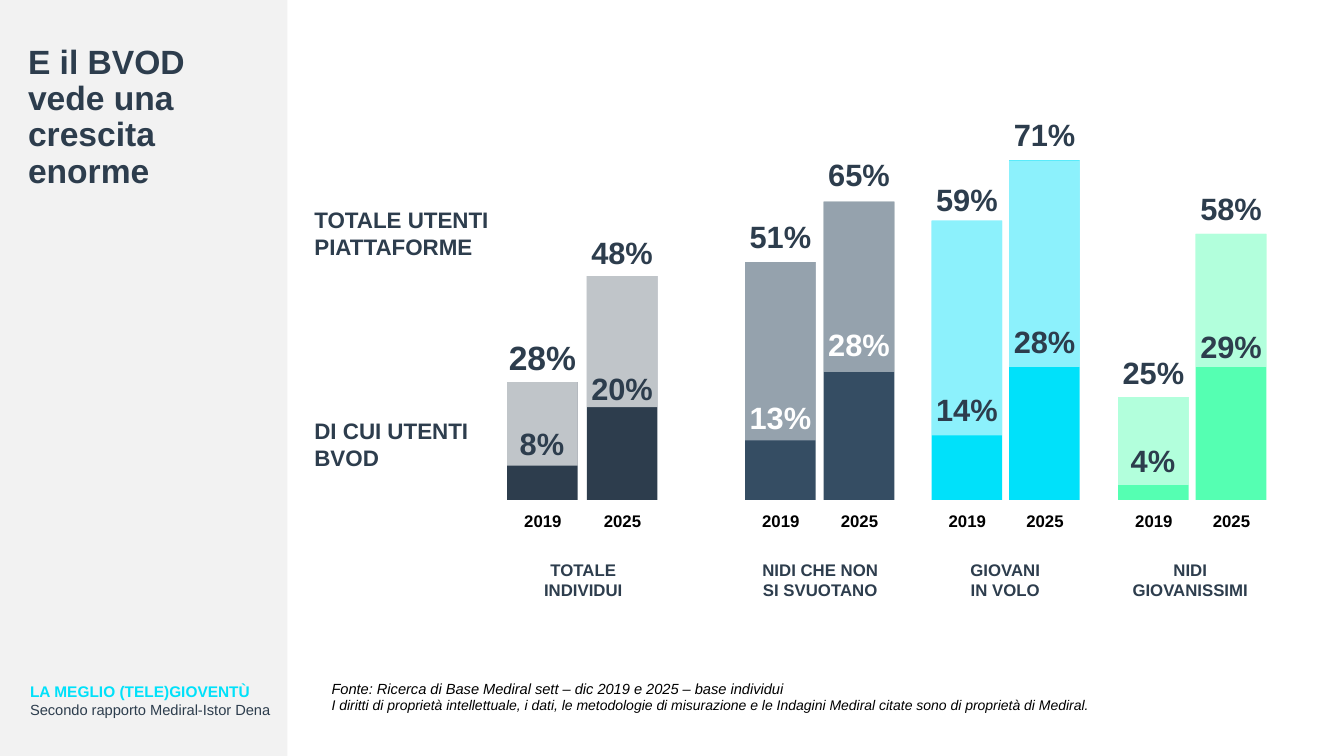
from pptx import Presentation
from pptx.dml.color import RGBColor
from pptx.enum.shapes import MSO_SHAPE
from pptx.enum.text import MSO_AUTO_SIZE, PP_ALIGN
from pptx.oxml.ns import qn
from pptx.util import Emu, Pt
from lxml.etree import SubElement

SCALE = 9144
INK = RGBColor(0x2D, 0x3D, 0x4D)
NAVY = RGBColor(0x35, 0x4D, 0x63)
CYAN = RGBColor(0x00, 0xE1, 0xFA)
MINT = RGBColor(0x55, 0xFF, 0xB2)
PALE = RGBColor(0xF2, 0xF2, 0xF2)
WHITE = RGBColor(0xFF, 0xFF, 0xFF)
BLACK = RGBColor(0x00, 0x00, 0x00)

BASE = 496
WIDE = 70


def px(*nums):
    return [Emu(num * SCALE) for num in nums]


def write(frame, text, size=12, color=INK, bold=True, italic=False,
          align=PP_ALIGN.LEFT, space=None, first=True):
    para = frame.paragraphs[0] if first else frame.add_paragraph()
    para.alignment = align
    para.line_spacing = space
    run = para.add_run()
    run.text = text
    font = run.font
    font.name = "Arial"
    font.size = Pt(size)
    font.bold = bold
    font.italic = italic
    font.color.rgb = color


class Board:
    def __init__(self, deck):
        self.slide = deck.slides.add_slide(deck.slide_layouts[6])

    def rect(self, box, color, alpha=None):
        shape = self.slide.shapes.add_shape(MSO_SHAPE.RECTANGLE, *px(*box))
        shape.shadow.inherit = False
        shape.fill.solid()
        shape.fill.fore_color.rgb = color
        shape.line.fill.background()
        if alpha:
            tone = shape.fill._xPr.find(qn("a:solidFill"))[0]
            SubElement(tone, qn("a:alpha")).set("val", str(alpha * 1000))

    def text(self, box, *lines, tight=False, **style):
        frame = self.slide.shapes.add_textbox(*px(*box)).text_frame
        frame.word_wrap = not tight
        if tight:
            frame.auto_size = MSO_AUTO_SIZE.SHAPE_TO_FIT_TEXT
            frame.margin_left = frame.margin_right = 0
            frame.margin_top = frame.margin_bottom = 0
        for rank, line in enumerate(lines):
            words, extra = line if isinstance(line, tuple) else (line, {})
            write(frame, words, first=rank == 0, **{**style, **extra})

    def value(self, left, top, text, size=22, color=INK):
        width = round(size * (2.82 if len(text) == 3 else 2.05))
        height = round(size * 1.68)
        box = (left + (WIDE - width) // 2, top, width, height)
        self.text(box, text, tight=True, size=size, color=color,
                  align=PP_ALIGN.CENTER)

    def bar(self, left, top, split, color, alpha):
        self.rect((left, top, WIDE, BASE - top), color)
        self.rect((left, top, WIDE, split - top), WHITE, alpha)

    def year(self, left, text):
        self.text((left - 11, 502, 93, 30), text, color=BLACK,
                  align=PP_ALIGN.CENTER)

    def group(self, name, left, width, color, alpha, tint, bars):
        for year, bar in zip(("2019", "2025"), bars):
            start, top, split, total, high, part, low, size = bar
            self.bar(start, top, split, color, alpha)
            self.value(start, high, total, size)
            self.value(start, low, part, color=tint)
            self.year(start, year)
        self.text((left, 550, width, 50), name, align=PP_ALIGN.CENTER)


GROUPS = [
    ("TOTALE INDIVIDUI", 514, 129, INK, 70, INK, [
        (503, 379, 462, "28%", 334, "8%", 421, 24),
        (582, 274, 404, "48%", 232, "20%", 367, 22)]),
    ("NIDI CHE NON SI SVUOTANO", 739, 149, NAVY, 48, WHITE, [
        (739, 260, 437, "51%", 216, "13%", 396, 22),
        (817, 200, 369, "65%", 155, "28%", 323, 22)]),
    ("GIOVANI IN VOLO", 948, 98, CYAN, 55, INK, [
        (924, 219, 432, "59%", 179, "14%", 388, 22),
        (1001, 159, 364, "71%", 115, "28%", 320, 22)]),
    ("NIDI GIOVANISSIMI", 1106, 149, MINT, 55, INK, [
        (1109, 394, 481, "25%", 351, "4%", 438, 22),
        (1186, 232, 364, "58%", 188, "29%", 325, 22)]),
]


def main():
    deck = Presentation()
    deck.slide_width, deck.slide_height = px(1333, 750)
    board = Board(deck)
    board.rect((0, 0, 285, 750), PALE)
    board.text((20, 672, 578, 46),
               ("LA MEGLIO (TELE)GIOVENTÙ", {"size": 11, "color": CYAN}),
               ("Secondo rapporto Mediral-Istor Dena", {"bold": False}),
               size=10.5)
    board.text((18, 40, 260, 335), "E il BVOD vede una crescita enorme",
               size=24, space=0.9)
    board.text((319, 669, 790, 62),
               "Fonte: Ricerca di Base Mediral sett – dic 2019 e 2025"
               " – base individui",
               ("I diritti di proprietà intellettuale, i dati, le metodologie"
                " di misurazione e le Indagini Mediral citate sono di"
                " proprietà di Mediral.", {"size": 10}),
               size=10.5, color=BLACK, bold=False, italic=True)
    board.text((302, 200, 197, 64), "TOTALE UTENTI PIATTAFORME", size=16)
    board.text((302, 409, 176, 64), "DI CUI UTENTI", "BVOD", size=16)
    for group in GROUPS:
        board.group(*group)
    deck.save("out.pptx")


if __name__ == "__main__":
    main()
